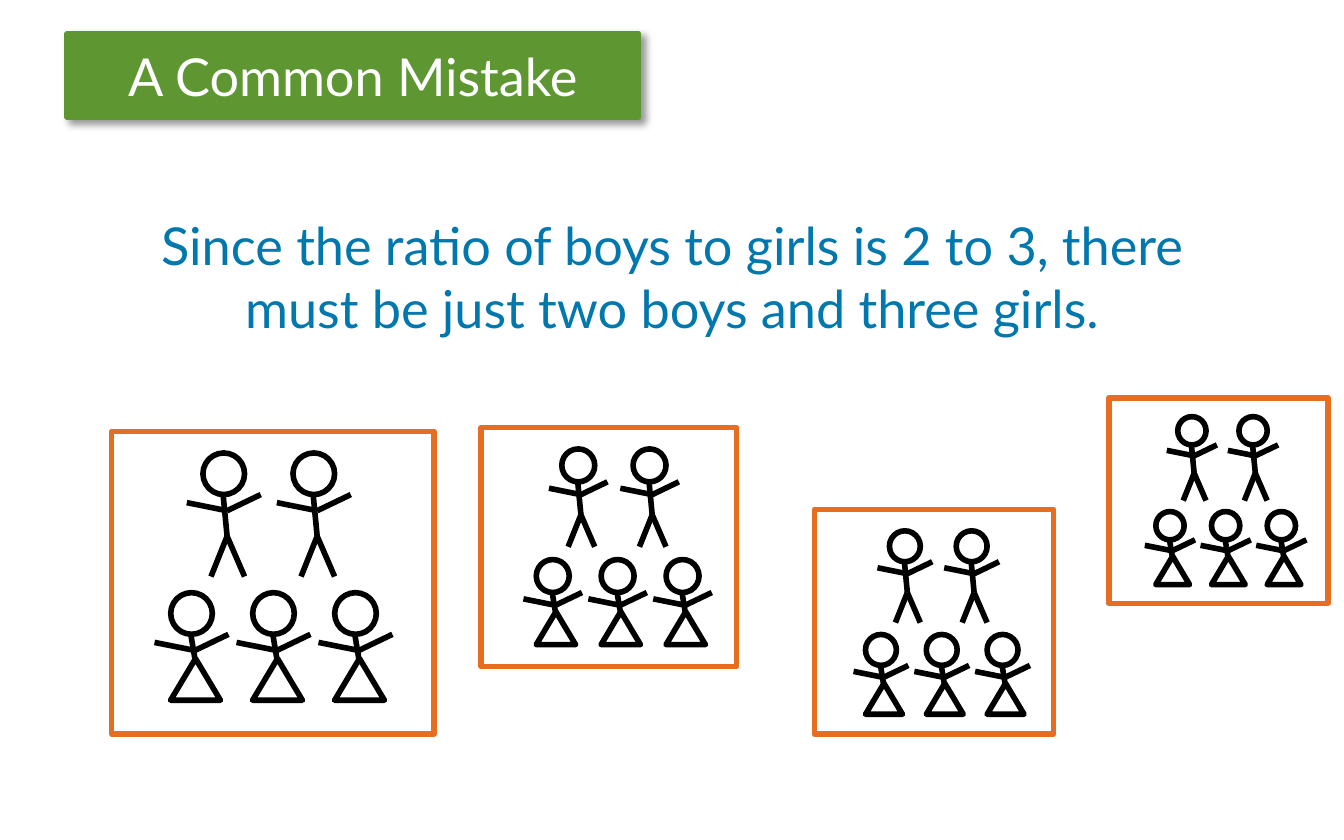
"""Build the slide on a common mistake in reading the ratio of boys to girls."""
import pptx
import pptx.dml.color
import pptx.enum.shapes
import pptx.enum.text
import pptx.oxml
import pptx.oxml.ns
import pptx.util

Inches = pptx.util.Inches
SHAPES = pptx.enum.shapes.MSO_SHAPE

TITLE = "A Common Mistake"
STATEMENT = (
    "Since the ratio of boys to girls is 2 to 3, there must be just "
    "two boys and three girls."
)

# frame: left, top, width, height; figures: left and top of the drawn children
PANELS = [
    {"frame": (0.83, 3.21, 2.4, 2.25), "figures": (1.27, 3.37)},
    {"frame": (3.58, 3.18, 1.9, 1.78), "figures": (3.99, 3.34)},
    {"frame": (6.06, 3.79, 1.78, 1.67), "figures": (6.44, 3.95)},
    {"frame": (8.25, 2.96, 1.63, 1.53), "figures": (8.6, 3.1)},
]
FULL_WIDTH = 2.4
HEAD = (0, 0, 0.31, 0.31)
SKIRT = (0, 0.49, 0.37, 0.31)
ARMS = [(0.18, 0.43, 0.43, 0.31), (-0.12, 0.37, 0.18, 0.43)]
FIGURES = {
    "boy": {
        "start": (0.24, 0), "step": 0.67, "count": 2,
        "shapes": [(SHAPES.OVAL, HEAD)],
        "lines": [(0.15, 0.31, 0.18, 0.62), *ARMS,
                  (0.18, 0.62, 0.06, 0.92), (0.18, 0.62, 0.31, 0.92)],
    },
    "girl": {
        "start": (0, 1.04), "step": 0.61, "count": 3,
        "shapes": [(SHAPES.OVAL, HEAD), (SHAPES.ISOSCELES_TRIANGLE, SKIRT)],
        "lines": [(0.15, 0.31, 0.18, 0.49), *ARMS],
    },
}
THEME = {
    "font": "Lato", "size": 28, "line": 3,
    "green": "5E9732", "white": "FFFFFF", "blue": "0078AE",
    "orange": "E86D1F", "black": "000000",
}
SHADOW = (
    '<a:effectLst xmlns:a="http://schemas.openxmlformats.org/drawingml/2006/main">'
    '<a:outerShdw blurRad="50800" dist="38100" dir="2700000" algn="tl" rotWithShape="0">'
    '<a:srgbClr val="000000"><a:alpha val="40000"/></a:srgbClr>'
    "</a:outerShdw></a:effectLst>"
)


def color(name):
    """Return the theme colour of this name."""
    return pptx.dml.color.RGBColor.from_string(THEME[name])


def add_effects(shape, markup=None):
    """Give a shape or connector the effects in markup, or none at all."""
    properties = shape._element.spPr
    if markup:
        properties.append(pptx.oxml.parse_xml(markup))
    else:
        pptx.oxml.ns  # namespace map used by makeelement below
        properties.append(properties.makeelement(pptx.oxml.ns.qn("a:effectLst"), {}))


def set_line(item, line_color):
    """Draw the outline of a shape or connector with rounded joins."""
    item.line.color.rgb = color(line_color)
    item.line.width = pptx.util.Pt(THEME["line"])
    outline = item.line._get_or_add_ln()
    outline.append(outline.makeelement(pptx.oxml.ns.qn("a:round"), {}))


def add_outline(shapes, kind, box, line_color, fill_color=None, effects=None):
    """Add a preset shape with an outline and, if named, a fill."""
    shape = shapes.add_shape(kind, *map(Inches, box))
    if fill_color:
        shape.fill.solid()
        shape.fill.fore_color.rgb = color(fill_color)
    else:
        shape.fill.background()
    set_line(shape, line_color)
    add_effects(shape, effects)
    return shape


def write_text(shape, text, text_color="black", anchor="TOP"):
    """Write one centred paragraph into a shape."""
    frame = shape.text_frame
    frame.word_wrap = True
    frame.vertical_anchor = pptx.enum.text.MSO_ANCHOR[anchor]
    paragraph = frame.paragraphs[0]
    paragraph.text = text
    paragraph.alignment = pptx.enum.text.PP_ALIGN.CENTER
    paragraph.font.name = THEME["font"]
    paragraph.font.size = pptx.util.Pt(THEME["size"])
    paragraph.font.color.rgb = color(text_color)


def add_figure(shapes, figure, left, top, scale):
    """Draw one child with the head at left and top."""
    for kind, (x, y, width, height) in figure["shapes"]:
        box = (left + x * scale, top + y * scale, width * scale, height * scale)
        add_outline(shapes, kind, box, "black")
    for x1, y1, x2, y2 in figure["lines"]:
        ends = (left + x1 * scale, top + y1 * scale, left + x2 * scale, top + y2 * scale)
        limb = shapes.add_connector(
            pptx.enum.shapes.MSO_CONNECTOR.STRAIGHT, *map(Inches, ends))
        set_line(limb, "black")
        add_effects(limb)


def add_panel(slide, panel):
    """Draw a frame with two boys above three girls."""
    shapes = slide.shapes.add_group_shape().shapes
    left, top = panel["figures"]
    scale = panel["frame"][2] / FULL_WIDTH
    for figure in FIGURES.values():
        x, y = figure["start"]
        for index in range(figure["count"]):
            offset = x + index * figure["step"]
            add_figure(shapes, figure, left + offset * scale, top + y * scale, scale)
    add_outline(shapes, SHAPES.RECTANGLE, panel["frame"], "orange")


def main():
    """Build and save the presentation."""
    presentation = pptx.Presentation()
    presentation.slide_width = Inches(10)
    presentation.slide_height = Inches(6.25)
    slide = presentation.slides.add_slide(presentation.slide_layouts[6])
    banner = add_outline(slide.shapes, SHAPES.RECTANGLE, (0.5, 0.25, 4.25, 0.62),
                         "green", fill_color="green", effects=SHADOW)
    write_text(banner, TITLE, text_color="white", anchor="MIDDLE")
    statement = slide.shapes.add_textbox(*map(Inches, (1, 1.54, 8, 1.75)))
    write_text(statement, STATEMENT, text_color="blue")
    for panel in PANELS:
        add_panel(slide, panel)
    presentation.save("out.pptx")


if __name__ == "__main__":
    main()
